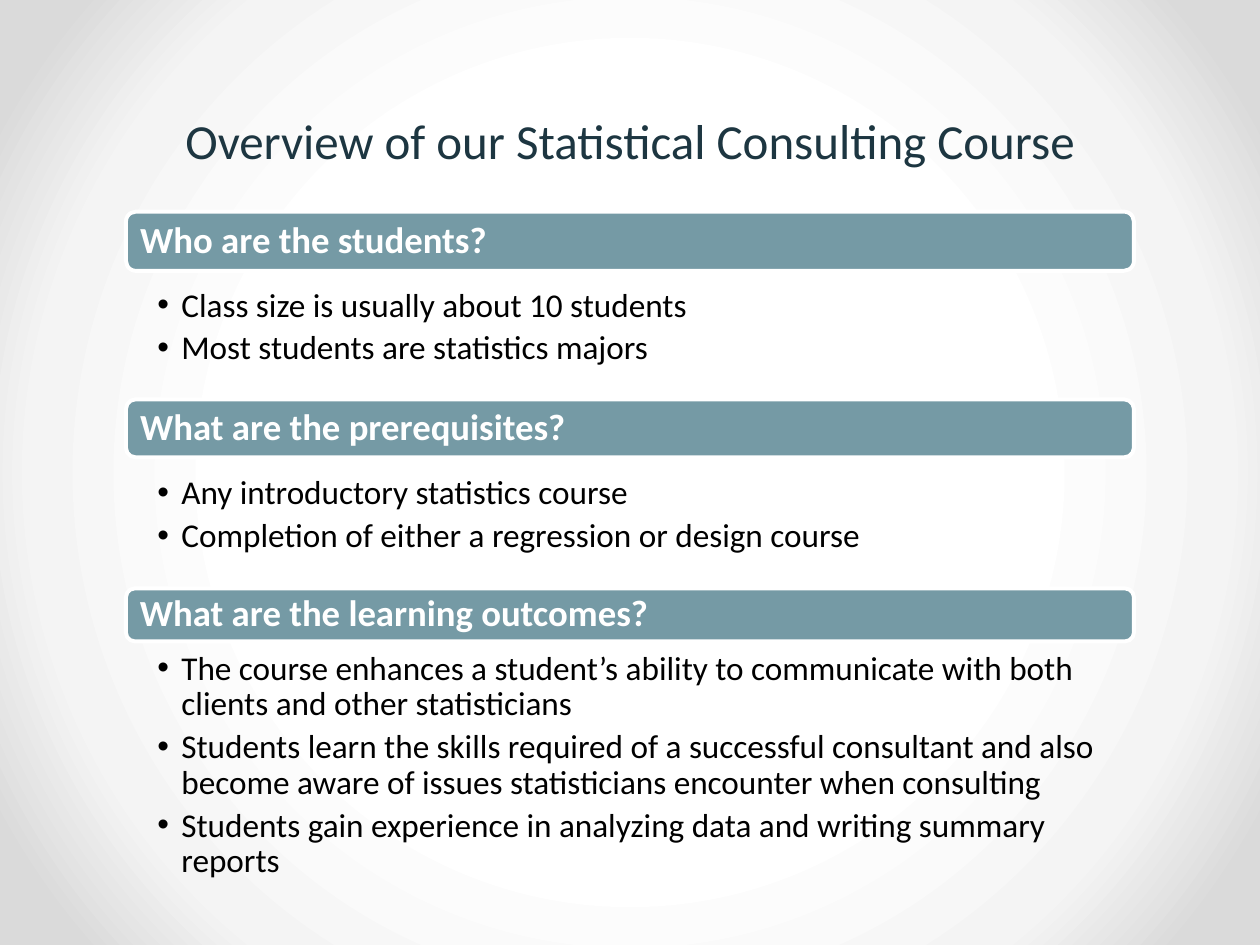
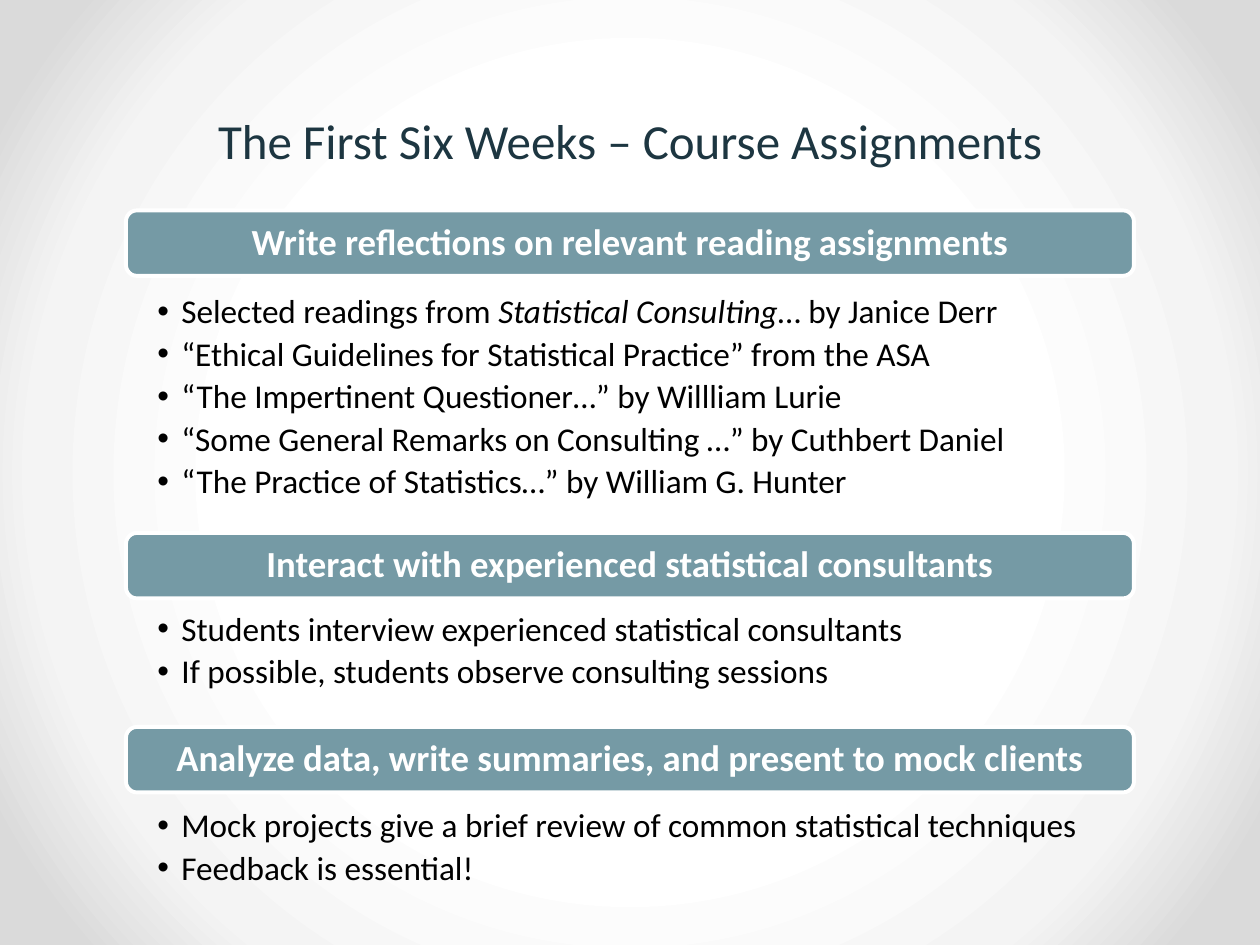
"""Build two course slides of headed bullet sections."""
from dataclasses import dataclass

import lxml.etree
import pptx
import pptx.dml.color
import pptx.enum.shapes
import pptx.enum.text
import pptx.oxml.ns
import pptx.presentation
import pptx.shapes.base
import pptx.slide
import pptx.text.text
import pptx.util

ALIGN = pptx.enum.text.PP_ALIGN
ANCHOR = pptx.enum.text.MSO_ANCHOR
RGBColor = pptx.dml.color.RGBColor

FONT = "Calibri"
WHITE = RGBColor(0xFF, 0xFF, 0xFF)
BLACK = RGBColor(0, 0, 0)
NAVY = RGBColor(0x1D, 0x36, 0x41)
TEAL = RGBColor(0x75, 0x9A, 0xA5)
PALE_GREY = RGBColor(0xF4, 0xF4, 0xF4)
EDGE_GREY = RGBColor(0xDA, 0xDA, 0xDA)
BACKDROP_STOPS = ((50, WHITE), (76, PALE_GREY), (92, EDGE_GREY))

SLIDE_WIDTH = pptx.util.Inches(10)
SLIDE_HEIGHT = pptx.util.Inches(7.5)
COLUMN = SLIDE_WIDTH / 100
ROW = SLIDE_HEIGHT / 100
TITLE_SIZE, HEADING_SIZE, BULLET_SIZE = 28, 21, 19
HEADING_INSETS = (0.09, 0.09, 0.09, 0.09)
BULLET_INSETS = (0.25, 0.03, 0.15, 0.03)
BULLET_INDENT = pptx.util.Inches(0.19)


@dataclass(frozen=True)
class Box:
    """Place on the grid of 100 columns and 100 rows."""
    left: float
    top: float
    width: float
    height: float

    def lengths(self) -> tuple[int, int, int, int]:
        """Return left, top, width and height in slide units."""
        return (round(self.left * COLUMN), round(self.top * ROW),
                round(self.width * COLUMN), round(self.height * ROW))


@dataclass(frozen=True)
class Section:
    """Heading bar with its bullets, placed by rows; *stars* mark italics."""
    heading: str
    bullets: tuple[str, ...]
    bar_top: float
    bar_height: float
    list_top: float
    list_height: float


@dataclass(frozen=True)
class CourseSlide:
    """Title, heading alignment and sections of one slide."""
    title: str
    heading_alignment: ALIGN
    sections: tuple[Section, ...]


TITLE_BOX = Box(5, 11.07, 90, 7.6)
COURSE_SLIDES = (
    CourseSlide("Overview of our Statistical Consulting Course", ALIGN.LEFT, (
        Section("Who are the students?", (
            "Class size is usually about 10 students",
            "Most students are statistics majors",
        ), 22.4, 6.27, 30.13, 14),
        Section("What are the prerequisites?", (
            "Any introductory statistics course",
            "Completion of either a regression or design course",
        ), 42.27, 6.13, 50, 14),
        Section("What are the learning outcomes?", (
            "The course enhances a student’s ability to communicate with both "
            "clients and other statisticians",
            "Students learn the skills required of a successful consultant and also "
            "become aware of issues statisticians encounter when consulting",
            "Students gain experience in analyzing data and writing summary reports",
        ), 62.27, 5.6, 68.53, 25.87),
    )),
    CourseSlide("The First Six Weeks – Course Assignments", ALIGN.CENTER, (
        Section("Write reflections on relevant reading assignments", (
            "Selected readings from *Statistical Consulting*… by Janice Derr",
            "“Ethical Guidelines for Statistical Practice” from the ASA",
            "“The Impertinent Questioner…” by Willliam Lurie",
            "“Some General Remarks on Consulting …” by Cuthbert Daniel",
            "“The Practice of Statistics…” by William G. Hunter",
        ), 22.27, 6.93, 30.8, 23.6),
        Section("Interact with experienced statistical consultants", (
            "Students interview experienced statistical consultants",
            "If possible, students observe consulting sessions",
        ), 56.4, 6.93, 64.4, 14.8),
        Section("Analyze data, write summaries, and present to mock clients", (
            "Mock projects give a brief review of common statistical techniques",
            "Feedback is essential!",
        ), 76.93, 6.93, 85.2, 14.8),
    )),
)


def paint_backdrop(slide: pptx.slide.Slide) -> None:
    """Fill the slide with a radial fade from white to grey."""
    slide.background.fill.gradient()
    gradient = slide.element.find(".//" + pptx.oxml.ns.qn("a:gradFill"))
    for child in list(gradient):
        gradient.remove(child)
    stops = lxml.etree.SubElement(gradient, pptx.oxml.ns.qn("a:gsLst"))
    for percent, color in BACKDROP_STOPS:
        stop = lxml.etree.SubElement(stops, pptx.oxml.ns.qn("a:gs"), pos=str(percent * 1000))
        lxml.etree.SubElement(stop, pptx.oxml.ns.qn("a:srgbClr"), val=str(color))
    shade = lxml.etree.SubElement(gradient, pptx.oxml.ns.qn("a:path"))
    shade.set("path", "circle")
    lxml.etree.SubElement(shade, pptx.oxml.ns.qn("a:fillToRect"),
                          l="50000", t="50000", r="50000", b="50000")


def style_paragraph(paragraph: pptx.text.text._Paragraph, size: int, color: RGBColor,
                    alignment: ALIGN = ALIGN.LEFT, bold: bool = False) -> None:
    """Set the alignment and the font of every run."""
    paragraph.alignment = alignment
    for run in paragraph.runs:
        run.font.name = FONT
        run.font.size = pptx.util.Pt(size)
        run.font.color.rgb = color
        run.font.bold = bold


def space_paragraph(paragraph: pptx.text.text._Paragraph, size: int, share: float) -> None:
    """Tighten the lines and leave a share of the text size below."""
    paragraph.line_spacing = 0.9
    paragraph.space_after = pptx.util.Pt(size * share)


def prepare_frame(shape: pptx.shapes.base.BaseShape,
                  insets: tuple[float, ...]) -> pptx.text.text.TextFrame:
    """Wrap the text of a shape and set its insets."""
    frame = shape.text_frame
    frame.word_wrap = True
    (frame.margin_left, frame.margin_top, frame.margin_right,
     frame.margin_bottom) = map(pptx.util.Inches, insets)
    return frame


def add_title(slide: pptx.slide.Slide, title: str) -> None:
    """Draw the centred slide title."""
    frame = slide.shapes.add_textbox(*TITLE_BOX.lengths()).text_frame
    frame.word_wrap = True
    frame.text = title
    style_paragraph(frame.paragraphs[0], TITLE_SIZE, NAVY, ALIGN.CENTER)


def add_heading(slide: pptx.slide.Slide, section: Section, alignment: ALIGN) -> None:
    """Draw the rounded bar with the section heading."""
    box = Box(10, section.bar_top, 80, section.bar_height)
    bar = slide.shapes.add_shape(
        pptx.enum.shapes.MSO_SHAPE.ROUNDED_RECTANGLE, *box.lengths())
    bar.shadow.inherit = False
    bar.fill.solid()
    bar.fill.fore_color.rgb = TEAL
    bar.line.color.rgb = WHITE
    bar.line.width = pptx.util.Pt(2.25)
    frame = prepare_frame(bar, HEADING_INSETS)
    frame.vertical_anchor = ANCHOR.MIDDLE
    frame.text = section.heading
    paragraph = frame.paragraphs[0]
    style_paragraph(paragraph, HEADING_SIZE, WHITE, alignment, bold=True)
    space_paragraph(paragraph, HEADING_SIZE, 0.35)


def add_bullets(slide: pptx.slide.Slide, section: Section) -> None:
    """Draw the bullet list under a heading."""
    box = Box(10, section.list_top, 80, section.list_height)
    frame = prepare_frame(slide.shapes.add_textbox(*box.lengths()), BULLET_INSETS)
    for index, bullet in enumerate(section.bullets):
        paragraph = frame.add_paragraph() if index else frame.paragraphs[0]
        for part_index, part in enumerate(bullet.split("*")):
            run = paragraph.add_run()
            run.text = part
            run.font.italic = part_index % 2 == 1
        style_paragraph(paragraph, BULLET_SIZE, BLACK)
        space_paragraph(paragraph, BULLET_SIZE, 0.2)
        properties = paragraph._p.get_or_add_pPr()
        properties.set("marL", str(BULLET_INDENT))
        properties.set("indent", str(-BULLET_INDENT))
        lxml.etree.SubElement(properties, pptx.oxml.ns.qn("a:buFont"), typeface="Arial")
        lxml.etree.SubElement(properties, pptx.oxml.ns.qn("a:buChar"), char="•")


def add_course_slide(presentation: pptx.presentation.Presentation,
                     content: CourseSlide) -> None:
    """Add one slide with its backdrop, title and sections."""
    slide = presentation.slides.add_slide(presentation.slide_layouts[6])
    paint_backdrop(slide)
    add_title(slide, content.title)
    for section in content.sections:
        add_heading(slide, section, content.heading_alignment)
        add_bullets(slide, section)


def main() -> None:
    """Build and save the presentation."""
    presentation = pptx.Presentation()
    presentation.slide_width = SLIDE_WIDTH
    presentation.slide_height = SLIDE_HEIGHT
    for content in COURSE_SLIDES:
        add_course_slide(presentation, content)
    presentation.save("out.pptx")


if __name__ == "__main__":
    main()
